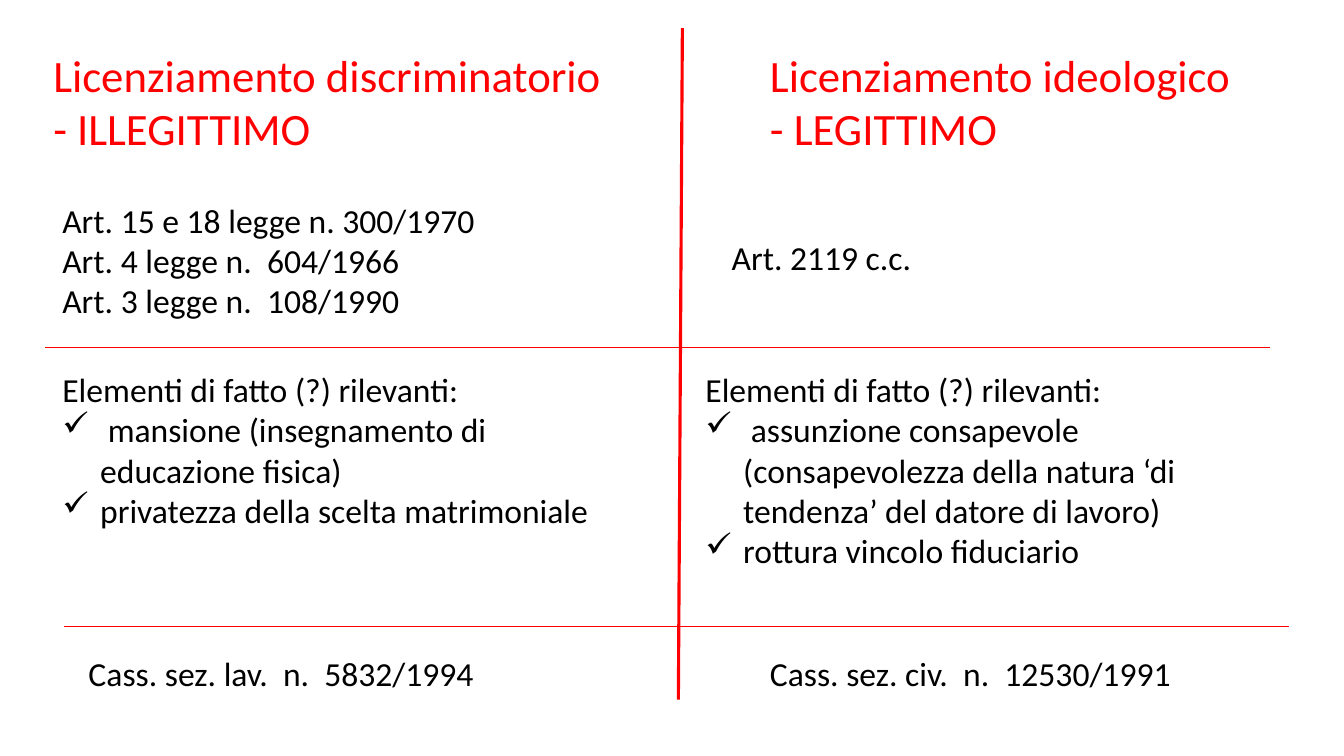
import pptx
import pptx.dml.color
import pptx.enum.shapes
import pptx.enum.text
import pptx.oxml.ns
import pptx.util
from lxml import etree

Pt = pptx.util.Pt
RED = pptx.dml.color.RGBColor(0xFF, 0x00, 0x00)
BLACK = pptx.dml.color.RGBColor(0x00, 0x00, 0x00)
FONT = "Calibri"
CHECK = "✓"
INDENT = 27

TITLE_TOP, FACTS_TOP, RULING_TOP = 30.24, 259.92, 462.96
TITLE_SIZE, BODY_SIZE = 32, 24

FACTS_HEADING = "Elementi di fatto (?) rilevanti:"

TITLES = [
    ((30.96, TITLE_TOP, 409.68, 84.96), ["Licenziamento discriminatorio - ILLEGITTIMO"]),
    ((542.88, TITLE_TOP, 378, 84.96), ["Licenziamento ideologico", "- LEGITTIMO"]),
]
SOURCES = [
    ((37.44, 138.96, 362.88, 94.32), [
        "Art. 15 e 18 legge n. 300/1970",
        "Art. 4 legge n.  604/1966",
        "Art. 3 legge n.  108/1990",
    ]),
    ((515.52, 165.6, 207.36, 36), ["Art. 2119 c.c."]),
    ((56.16, RULING_TOP, 338.4, 36), ["Cass. sez. lav.  n.  5832/1994"]),
    ((542.88, RULING_TOP, 338.4, 36), ["Cass. sez. civ.  n.  12530/1991"]),
]
FACTS = [
    ((37.44, FACTS_TOP, 402.48, 145.44), [
        " mansione (insegnamento di educazione fisica)",
        "privatezza della scelta matrimoniale",
    ]),
    ((496.8, FACTS_TOP, 429.84, 152.64), [
        " assunzione consapevole (consapevolezza della natura ‘di tendenza’ del datore di lavoro)",
        "rottura vincolo fiduciario",
    ]),
]
DIVIDERS = [
    ((487.44, 20.16, 484.56, 499.68), 2.25),
    ((32.4, 248.4, 907.2, 248.4), 0.5),
    ((46.08, 447.12, 920.88, 447.12), 0.5),
]


def add_check(paragraph):
    properties = paragraph._p.get_or_add_pPr()
    properties.set("marL", str(Pt(INDENT)))
    properties.set("indent", str(-Pt(INDENT)))
    bullet = etree.SubElement(properties, pptx.oxml.ns.qn("a:buChar"))
    bullet.set("char", CHECK)


def add_text(slide, box, lines, size, color, checked_from=None):
    text_frame = slide.shapes.add_textbox(*map(Pt, box)).text_frame
    text_frame.word_wrap = True
    text_frame.auto_size = pptx.enum.text.MSO_AUTO_SIZE.SHAPE_TO_FIT_TEXT
    text_frame.text = "\n".join(lines)
    for index, paragraph in enumerate(text_frame.paragraphs):
        if checked_from is not None and index >= checked_from:
            add_check(paragraph)
        for run in paragraph.runs:
            run.font.name = FONT
            run.font.size = Pt(size)
            run.font.color.rgb = color


def add_divider(slide, ends, width):
    connector = slide.shapes.add_connector(
        pptx.enum.shapes.MSO_CONNECTOR.STRAIGHT, *map(Pt, ends))
    connector.line.color.rgb = RED
    connector.line.width = Pt(width)
    etree.SubElement(connector._element.spPr, pptx.oxml.ns.qn("a:effectLst"))


def main():
    presentation = pptx.Presentation()
    presentation.slide_width = Pt(960)
    presentation.slide_height = Pt(540)
    slide = presentation.slides.add_slide(presentation.slide_layouts[6])
    for box, lines in TITLES:
        add_text(slide, box, lines, TITLE_SIZE, RED)
    for box, lines in SOURCES:
        add_text(slide, box, lines, BODY_SIZE, BLACK)
    for box, facts in FACTS:
        add_text(slide, box, [FACTS_HEADING, *facts], BODY_SIZE, BLACK, checked_from=1)
    for ends, width in DIVIDERS:
        add_divider(slide, ends, width)
    presentation.save("out.pptx")


if __name__ == "__main__":
    main()
